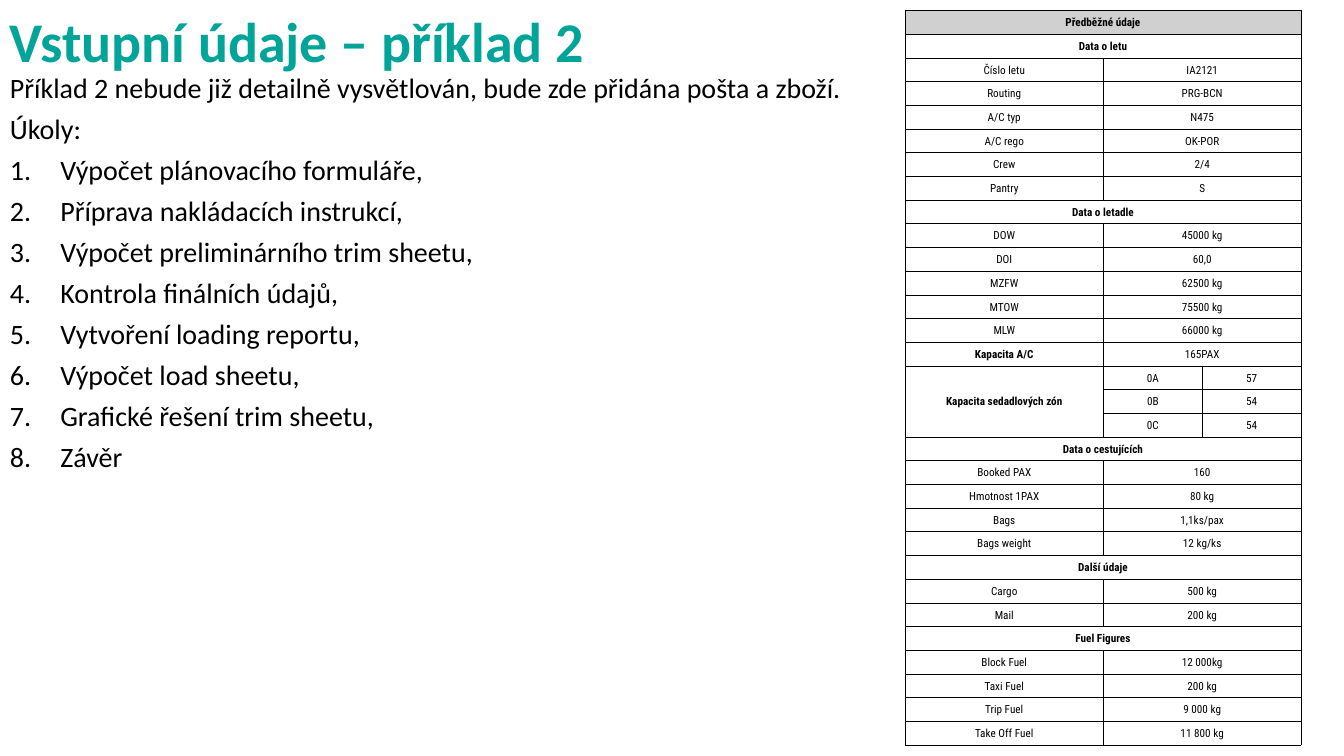
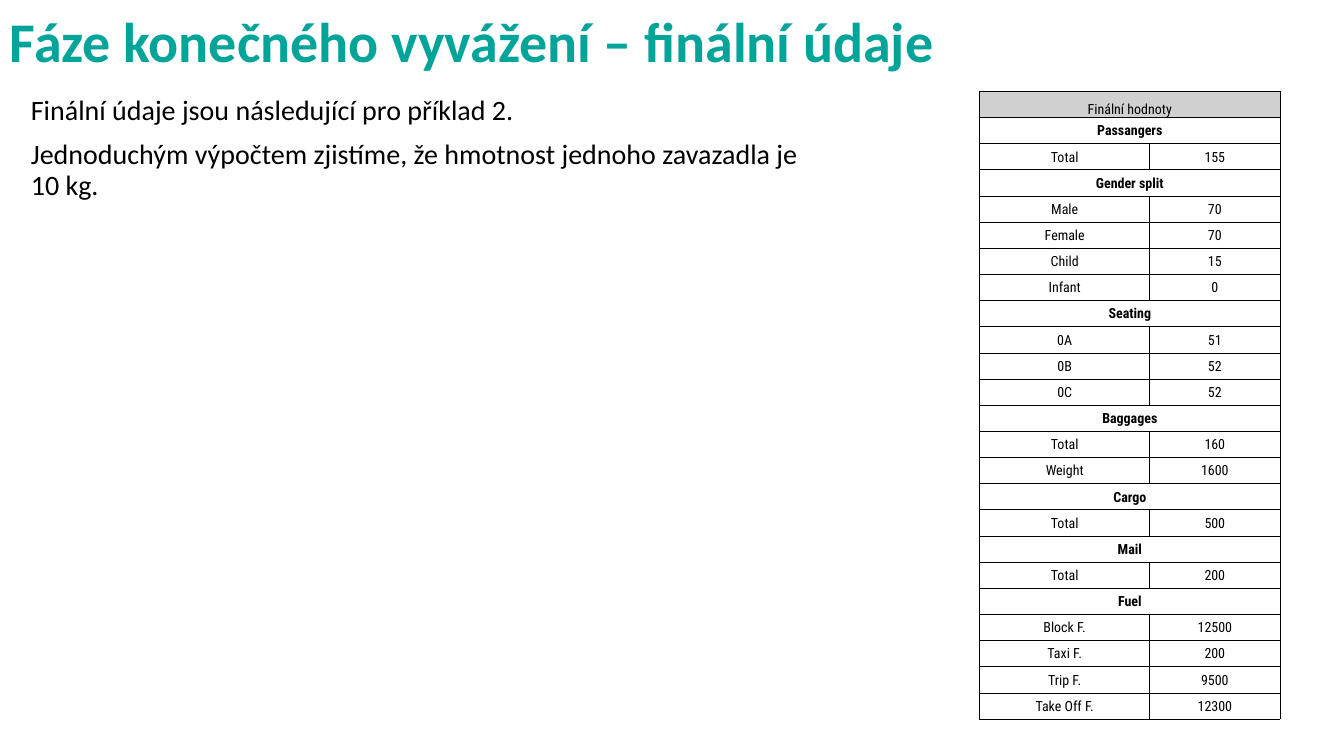
from dataclasses import dataclass
from typing import Any

from lxml.etree import SubElement
from pptx import Presentation
from pptx.dml.color import RGBColor
from pptx.enum.text import MSO_ANCHOR, PP_ALIGN
from pptx.oxml.ns import qn
from pptx.slide import Slide
from pptx.table import _Cell
from pptx.util import Emu, Pt

EMU_PER_PX = 9525


def px(length: float) -> Emu:
    return Emu(round(length * EMU_PER_PX))


@dataclass(frozen=True)
class Theme:
    accent: str = "00A499"
    ink: str = "000000"
    header_fill: str = "D0D0D0"
    text_font: str = "Calibri"
    table_font: str = "Roboto Condensed"
    title_size: int = 40
    body_size: int = 20
    border_width: float = 0.5


THEME = Theme()


@dataclass(frozen=True)
class Box:
    left: int
    top: int
    width: int
    height: int

    def emu(self) -> tuple[Emu, ...]:
        return tuple(px(n) for n in (self.left, self.top, self.width, self.height))


@dataclass(frozen=True)
class Line:
    text: str
    numbered: bool = False


@dataclass(frozen=True)
class Row:
    """The last cell fills the columns that are left; one cell makes a heading."""
    cells: tuple[str, ...]
    bold_label: bool = False
    label_rows: int = 1


@dataclass(frozen=True)
class DataTable:
    box: Box
    columns: tuple[int, ...]
    rows: tuple[Row, ...]
    size: int
    header_format: dict[str, Any]
    header_bold: bool = True


@dataclass(frozen=True)
class Page:
    title: str
    body_box: Box
    body: tuple[Line, ...]
    line_spacing: float
    table: DataTable


TITLE_BOX = Box(0, 0, 1239, 76)
NUMBER_INDENT = 48
CELL_FORMAT = {
    "margin_left": px(1), "margin_top": px(1), "margin_right": px(1),
    "margin_bottom": px(0), "vertical_anchor": MSO_ANCHOR.MIDDLE,
}


# Shared formatting
def apply_format(target: Any, values: dict[str, Any]) -> None:
    for name, value in values.items():
        setattr(target, name, value)


def add_run(paragraph: Any, text: str, font: str, size: int, color: str, bold: bool = False) -> None:
    run = paragraph.add_run()
    run.text = text
    apply_format(run.font, {"name": font, "size": Pt(size), "bold": bold})
    run.font.color.rgb = RGBColor.from_string(color)


def number_paragraph(paragraph: Any) -> None:
    properties = paragraph._p.get_or_add_pPr()
    properties.set("marL", str(px(NUMBER_INDENT)))
    properties.set("indent", str(-px(NUMBER_INDENT)))
    SubElement(properties, qn("a:buFont"), typeface="+mj-lt")
    SubElement(properties, qn("a:buAutoNum"), type="arabicPeriod")


def border_cell(cell: _Cell) -> None:
    properties = cell._tc.get_or_add_tcPr()
    for side in ("lnL", "lnR", "lnT", "lnB"):
        border = SubElement(properties, qn(f"a:{side}"), w=str(Pt(THEME.border_width)))
        fill = SubElement(border, qn("a:solidFill"))
        SubElement(fill, qn("a:srgbClr"), val=THEME.ink)


# Slide parts
def add_text_frame(slide: Slide, box: Box, anchor: MSO_ANCHOR) -> Any:
    frame = slide.shapes.add_textbox(*box.emu()).text_frame
    apply_format(frame, {"word_wrap": True, "vertical_anchor": anchor})
    return frame


def add_title(slide: Slide, text: str) -> None:
    paragraph = add_text_frame(slide, TITLE_BOX, MSO_ANCHOR.BOTTOM).paragraphs[0]
    paragraph.line_spacing = 0.9
    add_run(paragraph, text, THEME.text_font, THEME.title_size, THEME.accent, bold=True)


def add_body(slide: Slide, page: Page) -> None:
    frame = add_text_frame(slide, page.body_box, MSO_ANCHOR.TOP)
    for index, line in enumerate(page.body):
        paragraph = frame.add_paragraph() if index else frame.paragraphs[0]
        apply_format(paragraph, {"line_spacing": page.line_spacing, "space_before": Pt(10)})
        if line.numbered:
            number_paragraph(paragraph)
        add_run(paragraph, line.text, THEME.text_font, THEME.body_size, THEME.ink)


def add_data_table(slide: Slide, data: DataTable) -> None:
    last_column = len(data.columns) - 1
    table = slide.shapes.add_table(len(data.rows), len(data.columns), *data.box.emu()).table
    apply_format(table, {"first_row": False, "horz_banding": False})
    for column, width in zip(table.columns, data.columns):
        column.width = px(width)
    for table_row in table.rows:
        table_row.height = px(data.box.height / len(data.rows))
    for cell in table.iter_cells():
        apply_format(cell, CELL_FORMAT)
        border_cell(cell)
        cell.fill.background()

    for row_index, row in enumerate(data.rows):
        last_text = len(row.cells) - 1
        if last_text < last_column:
            table.cell(row_index, last_text).merge(table.cell(row_index, last_column))
        if row.label_rows > 1:
            table.cell(row_index, 0).merge(table.cell(row_index + row.label_rows - 1, 0))
        for column_index, text in enumerate(row.cells):
            if not text:
                continue
            bold = last_text == 0 or (row.bold_label and column_index == 0)
            if row_index == 0:
                bold = data.header_bold
            paragraph = table.cell(row_index, column_index).text_frame.paragraphs[0]
            paragraph.alignment = PP_ALIGN.CENTER
            add_run(paragraph, text, THEME.table_font, data.size, THEME.ink, bold)

    header = table.cell(0, 0)
    apply_format(header, data.header_format)
    header.fill.solid()
    header.fill.fore_color.rgb = RGBColor.from_string(THEME.header_fill)


def rows(*cells: tuple[str, ...]) -> tuple[Row, ...]:
    return tuple(Row(texts) for texts in cells)


# Content
TASKS = (
    "Výpočet plánovacího formuláře,",
    "Příprava nakládacích instrukcí,",
    "Výpočet preliminárního trim sheetu,",
    "Kontrola finálních údajů,",
    "Vytvoření loading reportu,",
    "Výpočet load sheetu,",
    "Grafické řešení trim sheetu,",
    "Závěr",
)

PRELIMINARY_ROWS = (
    *rows(
        ("Předběžné údaje",),
        ("Data o letu",),
        ("Číslo letu", "IA2121"),
        ("Routing", "PRG-BCN"),
        ("A/C typ", "N475"),
        ("A/C rego", "OK-POR"),
        ("Crew", "2/4"),
        ("Pantry", "S"),
        ("Data o letadle",),
        ("DOW", "45000 kg"),
        ("DOI", "60,0"),
        ("MZFW", "62500 kg"),
        ("MTOW", "75500 kg"),
        ("MLW", "66000 kg"),
    ),
    Row(("Kapacita A/C", "165PAX"), bold_label=True),
    Row(("Kapacita sedadlových zón", "0A", "57"), bold_label=True, label_rows=3),
    *rows(
        ("", "0B", "54"),
        ("", "0C", "54"),
        ("Data o cestujících",),
        ("Booked PAX", "160"),
        ("Hmotnost 1PAX", "80 kg"),
        ("Bags", "1,1ks/pax"),
        ("Bags weight", "12 kg/ks"),
        ("Další údaje",),
        ("Cargo", "500 kg"),
        ("Mail", "200 kg"),
        ("Fuel Figures",),
        ("Block Fuel", "12 000kg"),
        ("Taxi Fuel", "200 kg"),
        ("Trip Fuel", "9 000 kg"),
        ("Take Off Fuel", "11 800 kg"),
    ),
)

FINAL_ROWS = rows(
    ("Finální hodnoty",),
    ("Passangers",),
    ("Total", "155"),
    ("Gender split",),
    ("Male", "70"),
    ("Female", "70"),
    ("Child", "15"),
    ("Infant", "0"),
    ("Seating",),
    ("0A", "51"),
    ("0B", "52"),
    ("0C", "52"),
    ("Baggages",),
    ("Total", "160"),
    ("Weight", "1600"),
    ("Cargo",),
    ("Total", "500"),
    ("Mail",),
    ("Total", "200"),
    ("Fuel",),
    ("Block F.", "12500"),
    ("Taxi F.", "200"),
    ("Trip F.", "9500"),
    ("Take Off F.", "12300"),
)

PAGES = (
    Page(
        title="Vstupní údaje – příklad 2",
        body_box=Box(0, 69, 879, 409),
        body=(
            Line("Příklad 2 nebude již detailně vysvětlován, bude zde přidána pošta a zboží."),
            Line("Úkoly:"),
            *(Line(task, numbered=True) for task in TASKS),
        ),
        line_spacing=0.8,
        table=DataTable(Box(862, 10, 377, 700), (189, 94, 94), PRELIMINARY_ROWS, 8, {}),
    ),
    Page(
        title="Fáze konečného vyvážení – finální údaje",
        body_box=Box(20, 87, 764, 564),
        body=(
            Line("Finální údaje jsou následující pro příklad 2."),
            Line("Jednoduchým výpočtem zjistíme, že hmotnost jednoho zavazadla je 10 kg."),
        ),
        line_spacing=0.9,
        table=DataTable(Box(933, 87, 286, 598), (162, 124), FINAL_ROWS, 10,
                        {"vertical_anchor": MSO_ANCHOR.BOTTOM}, header_bold=False),
    ),
)


def main() -> None:
    presentation = Presentation()
    apply_format(presentation, {"slide_width": px(1280), "slide_height": px(720)})
    for page in PAGES:
        slide = presentation.slides.add_slide(presentation.slide_layouts[6])
        add_title(slide, page.title)
        add_body(slide, page)
        add_data_table(slide, page.table)
    presentation.save("out.pptx")


if __name__ == "__main__":
    main()
